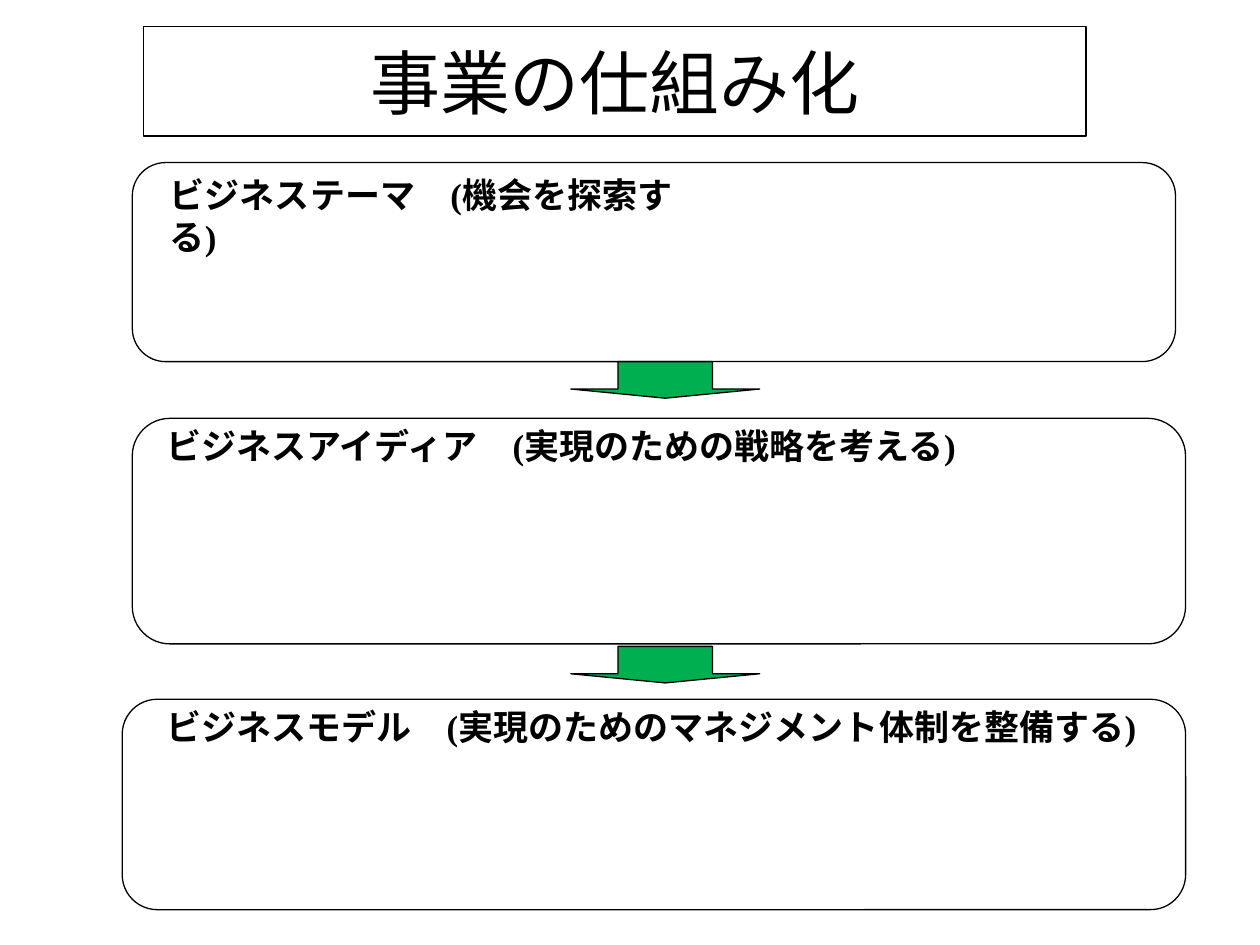
from pptx import Presentation
from pptx.dml.color import RGBColor
from pptx.enum.shapes import MSO_SHAPE as Shape
from pptx.enum.text import MSO_ANCHOR as Anchor, PP_ALIGN as Align
from pptx.util import Inches, Pt

BLACK, WHITE, GREEN = "000000", "FFFFFF", "00B050"

# box (left, top, width, height), label, label offset (x, y), label width
STAGES = [
    ((1.05, 1.29, 8.28, 1.58), "ビジネステーマ　(機会を探索する)", (0.2, 0.04), 4.33),
    ((1.05, 3.32, 8.36, 1.79), "ビジネスアイディア　(実現のための戦略を考える)", (0.17, 0), 7.24),
    ((0.97, 5.55, 8.44, 1.67), "ビジネスモデル　(実現のためのマネジメント体制を整備する)",
     (0.25, 0), 8.11),
]
ARROWS = [(4.53, top, 1.5, 0.29) for top in (2.87, 5.13)]


def color(code):
    return RGBColor.from_string(code)


def inches(box):
    return [Inches(n) for n in box]


def write(frame, text, size, font, bold=False, align=Align.LEFT, anchor=Anchor.TOP):
    frame.word_wrap = True
    frame.vertical_anchor = anchor
    par = frame.paragraphs[0]
    par.alignment = align
    run = par.add_run()
    run.text = text
    run.font.size = Pt(size)
    run.font.name = font
    run.font.bold = bold
    run.font.color.rgb = color(BLACK)


def outline(shape):
    shape.line.color.rgb = color(BLACK)
    shape.line.width = Pt(0.75)


def add_form(slide, kind, box, fill, adjust):
    form = slide.shapes.add_shape(kind, *inches(box))
    form.shadow.inherit = False
    form.fill.solid()
    form.fill.fore_color.rgb = color(fill)
    outline(form)
    for i, value in enumerate(adjust):
        form.adjustments[i] = value


def add_title(slide, box, text):
    title = slide.shapes.title
    title.left, title.top, title.width, title.height = inches(box)
    outline(title)
    write(title.text_frame, text, 40, "Calibri", align=Align.CENTER, anchor=Anchor.MIDDLE)


def add_stage(slide, box, text, shift, width):
    """Rounded panel with its heading in the top left corner."""
    add_form(slide, Shape.ROUNDED_RECTANGLE, box, WHITE, [0.167])
    place = (box[0] + shift[0], box[1] + shift[1], width, 0.44)
    label = slide.shapes.add_textbox(*inches(place))
    write(label.text_frame, text, 20, "Times New Roman", bold=True)


def main():
    prs = Presentation()
    prs.slide_width, prs.slide_height = Inches(10), Inches(7.5)
    slide = prs.slides.add_slide(prs.slide_layouts[5])
    add_title(slide, (1.14, 0.21, 7.48, 0.87), "事業の仕組み化")
    for stage in STAGES:
        add_stage(slide, *stage)
    for box in ARROWS:
        add_form(slide, Shape.DOWN_ARROW, box, GREEN, [0.5, 0.25])
    prs.save("out.pptx")


if __name__ == "__main__":
    main()
